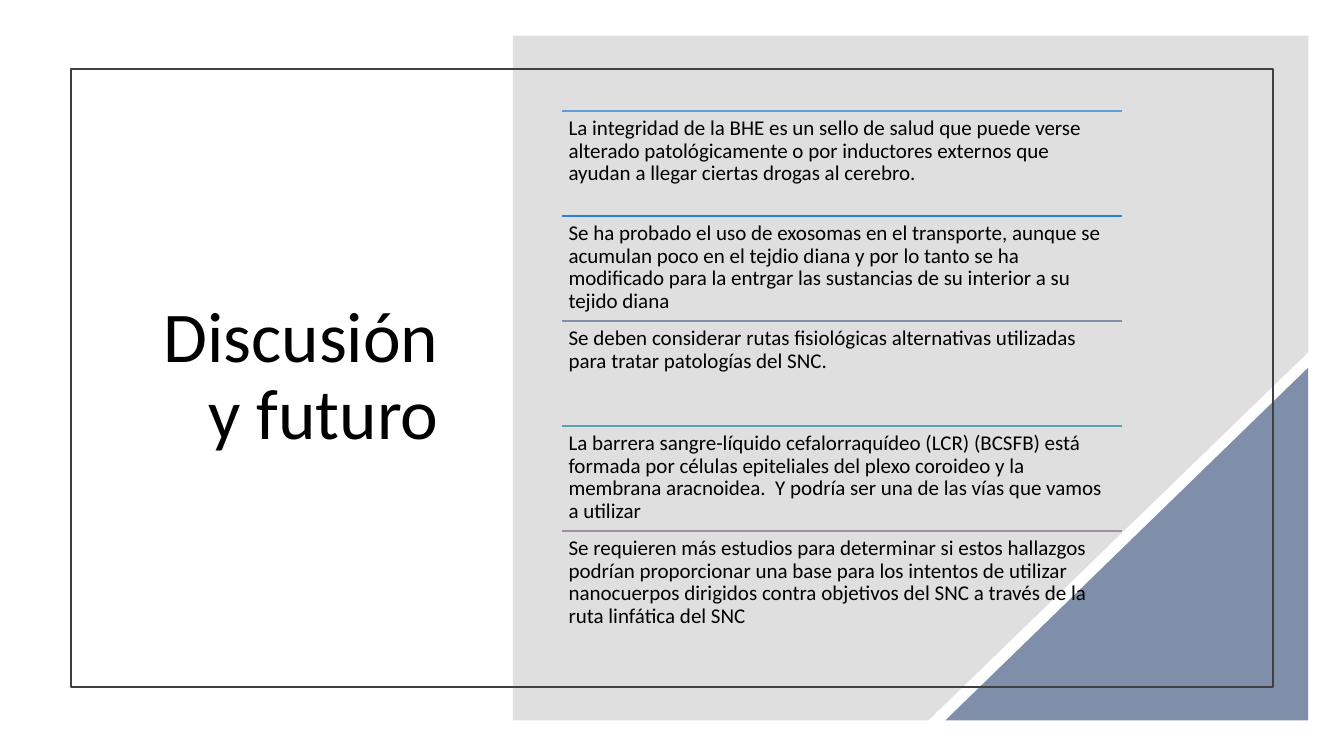
from lxml import etree
from pptx import Presentation
from pptx.dml.color import RGBColor
from pptx.enum.shapes import MSO_CONNECTOR, MSO_SHAPE
from pptx.enum.text import MSO_ANCHOR, PP_ALIGN
from pptx.oxml.ns import qn
from pptx.util import Pt

STRAIGHT = MSO_CONNECTOR.STRAIGHT
RECTANGLE, RIGHT_TRIANGLE = MSO_SHAPE.RECTANGLE, MSO_SHAPE.RIGHT_TRIANGLE
TOP, MIDDLE = MSO_ANCHOR.TOP, MSO_ANCHOR.MIDDLE
LEFT, RIGHT = PP_ALIGN.LEFT, PP_ALIGN.RIGHT

FONT = "Calibri"
ROW_HEIGHT = 75
POINTS = [
    ("629DD1", "La integridad de la BHE es un sello de salud que puede verse alterado "
     "patológicamente o por inductores externos que ayudan a llegar ciertas drogas al cerebro."),
    ("297FD5", "Se ha probado el uso de exosomas en el transporte, aunque se acumulan poco "
     "en el tejdio diana y por lo tanto se ha modificado para la entrgar las sustancias "
     "de su interior a su tejido diana"),
    ("7F8FA9", "Se deben considerar rutas fisiológicas alternativas utilizadas para tratar "
     "patologías del SNC."),
    ("5AA2AE", "La barrera sangre-líquido cefalorraquídeo (LCR) (BCSFB) está formada por "
     "células epiteliales del plexo coroideo y la membrana aracnoidea.  Y podría ser una "
     "de las vías que vamos a utilizar"),
    ("9D90A0", "Se requieren más estudios para determinar si estos hallazgos podrían "
     "proporcionar una base para los intentos de utilizar nanocuerpos dirigidos contra "
     "objetivos del SNC a través de la ruta linfática del SNC"),
]


def color(value):
    return RGBColor.from_string(value)


def fill_solid(shape, value):
    shape.shadow.inherit = False
    shape.fill.solid()
    shape.fill.fore_color.rgb = color(value)
    shape.line.fill.background()


def add_text(slide, box, text, size, align, anchor, margins):
    shape = slide.shapes.add_textbox(*map(Pt, box))
    frame = shape.text_frame
    frame.word_wrap = True
    frame.vertical_anchor = anchor
    frame.margin_left = frame.margin_right = Pt(margins[0])
    frame.margin_top = frame.margin_bottom = Pt(margins[1])
    frame.text = text
    para = frame.paragraphs[0]
    para.alignment = align
    para.line_spacing = 0.9
    font = para.runs[0].font
    font.name, font.size, font.color.rgb = FONT, Pt(size), color("000000")


def add_panel(slide, box):
    """Translucent panel with its lower right corner cut off, and the triangle in that corner."""
    left, top, width, height = box
    right, bottom = left + width, top + height
    corners = [(right, top), (right, top + 226.1),
               (right - 271.4, bottom), (left, bottom)]
    builder = slide.shapes.build_freeform(Pt(left), Pt(top))
    builder.add_line_segments([(Pt(x), Pt(y)) for x, y in corners], close=True)
    panel = builder.convert_to_shape()
    fill_solid(panel, "808080")
    tint = panel._element.spPr.find(qn("a:solidFill"))[0]
    etree.SubElement(tint, qn("a:alpha")).set("val", "25000")

    side, rise = 259.2, 252
    triangle = slide.shapes.add_shape(
        RIGHT_TRIANGLE, Pt(right - side), Pt(bottom - rise), Pt(side), Pt(rise))
    fill_solid(triangle, "7F8FA9")
    triangle._element.spPr.find(qn("a:xfrm")).set("flipH", "1")


def add_border(slide, box):
    border = slide.shapes.add_shape(RECTANGLE, *map(Pt, box))
    border.shadow.inherit = False
    border.fill.background()
    border.line.color.rgb = color("404040")
    border.line.width = Pt(1.5)


def add_point_list(slide, box):
    """Rows of equal height, each with a coloured rule on top."""
    left, top, width = box
    for index, (rule_color, text) in enumerate(POINTS):
        y = top + index * ROW_HEIGHT
        rule = slide.shapes.add_connector(STRAIGHT, Pt(left), Pt(y), Pt(left + width), Pt(y))
        rule.line.color.rgb = color(rule_color)
        rule.line.width = Pt(1)
        etree.SubElement(rule._element.spPr, qn("a:effectLst"))
        add_text(slide, (left, y, width, ROW_HEIGHT), text, 15, LEFT, TOP, (4.5, 4.5))


def main():
    deck = Presentation()
    deck.slide_width, deck.slide_height = Pt(960), Pt(540)
    slide = deck.slides.add_slide(deck.slide_layouts[6])
    add_text(slide, (79.2, 93.6, 241.2, 352.8), "Discusión y futuro", 51,
             RIGHT, MIDDLE, (7.2, 3.6))
    add_panel(slide, (366.4, 25.5, 568.1, 489.1))
    add_border(slide, (50.6, 49.1, 859, 441.4))
    add_point_list(slide, (401.6, 79.3, 399.8))
    deck.save("out.pptx")


if __name__ == "__main__":
    main()
